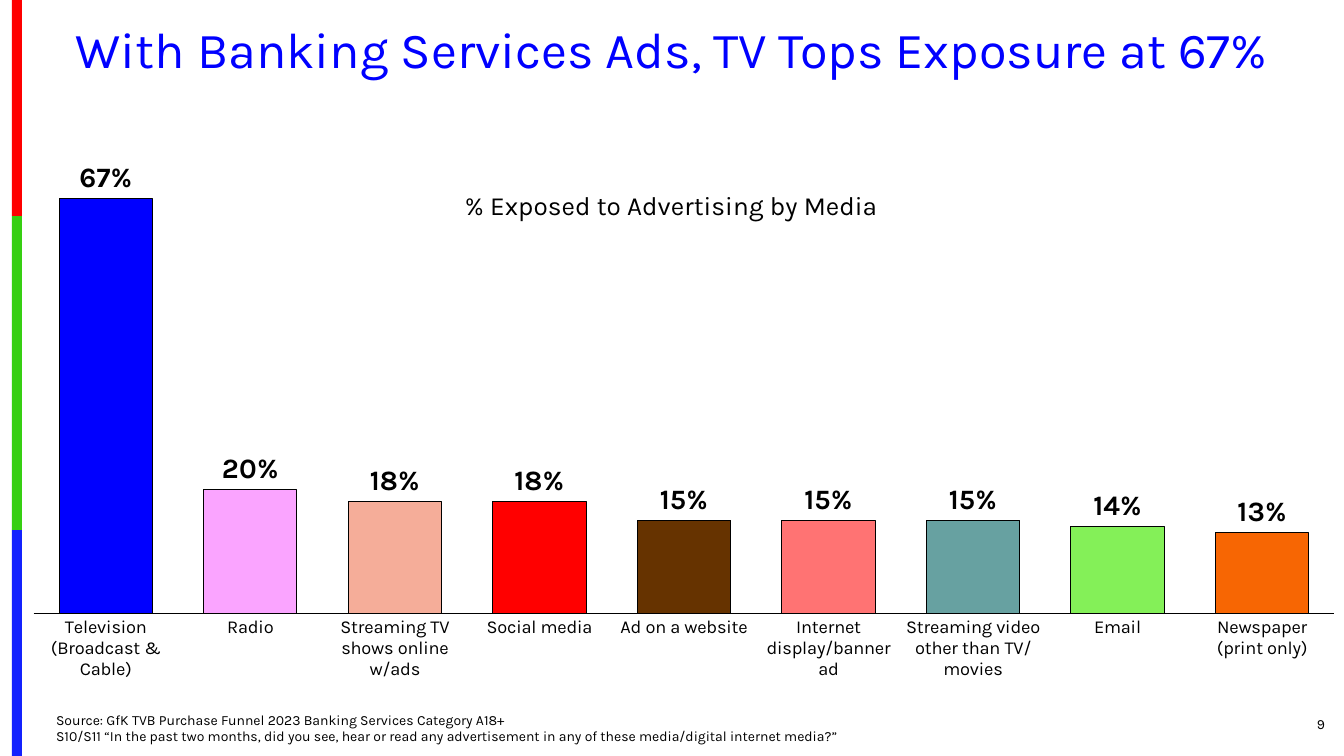
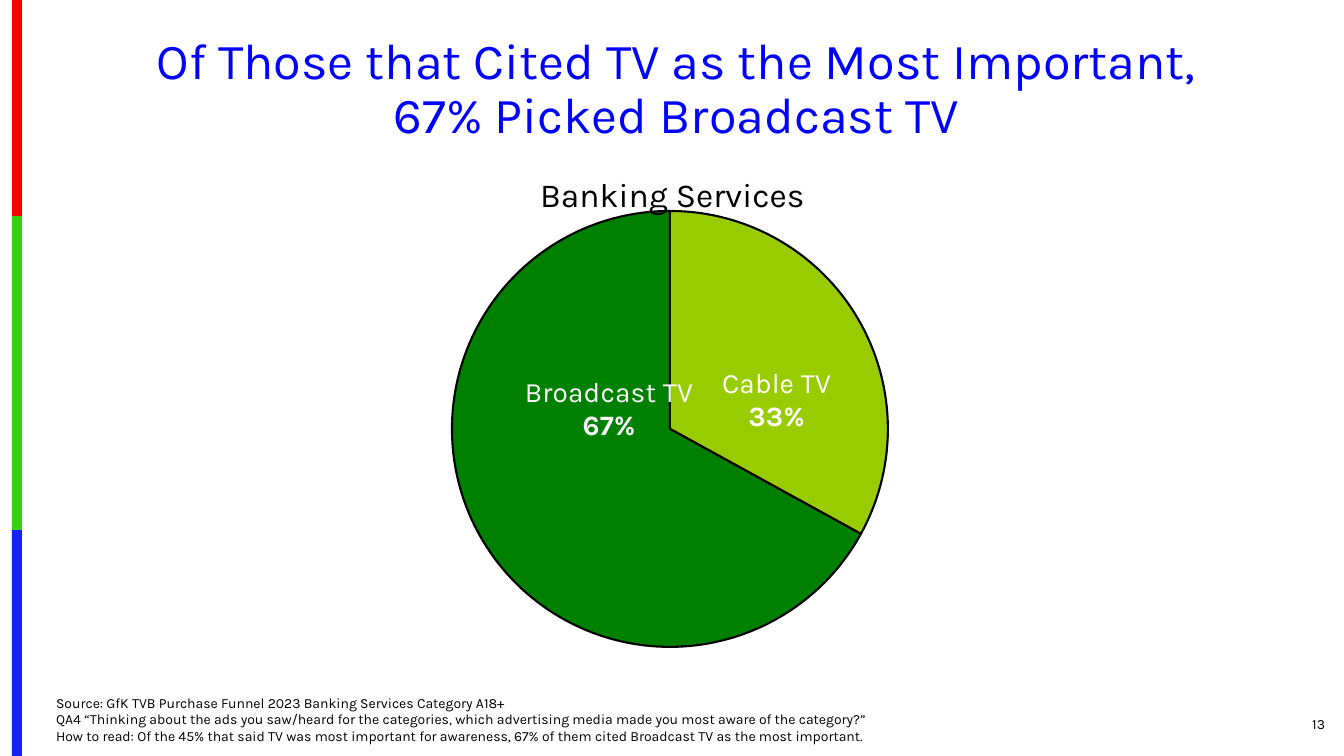
from dataclasses import dataclass

from lxml import etree
from pptx import Presentation
from pptx.chart.data import CategoryChartData
from pptx.dml.color import RGBColor
from pptx.enum.chart import XL_CHART_TYPE, XL_LABEL_POSITION, XL_TICK_MARK
from pptx.enum.shapes import MSO_SHAPE
from pptx.enum.text import MSO_ANCHOR, MSO_AUTO_SIZE, PP_ALIGN
from pptx.oxml.ns import qn
from pptx.util import Pt

COLUMNS, PIE = XL_CHART_TYPE.COLUMN_CLUSTERED, XL_CHART_TYPE.PIE
ABOVE_BAR, MID_SLICE = XL_LABEL_POSITION.OUTSIDE_END, XL_LABEL_POSITION.CENTER
NO_TICKS = XL_TICK_MARK.NONE
RECTANGLE = MSO_SHAPE.RECTANGLE
TOP, MIDDLE = MSO_ANCHOR.TOP, MSO_ANCHOR.MIDDLE
LEFT, CENTER, RIGHT = PP_ALIGN.LEFT, PP_ALIGN.CENTER, PP_ALIGN.RIGHT
FIXED_SIZE = MSO_AUTO_SIZE.NONE

PX = 12192000 / 1344
SLIDE_SIZE = (1344, 756)


@dataclass(frozen=True)
class Theme:
    face: str = "Karla"
    heading: str = "0000FF"
    ink: str = "000000"
    paper: str = "FFFFFF"
    title_size: int = 36
    label_size: int = 20
    axis_size: int = 13
    note_size: int = 10
    bar_outline: float = 0.75
    slice_outline: float = 1.5


THEME = Theme()

BAND_LEFT, BAND_WIDTH = 12, 10
BANDS = [("FE0000", 216), ("36CF12", 314), ("1322FE", 226)]
NUMBER_BOX = (1226, 704, 109, 40)
SOURCE = "Source: GfK TVB Purchase Funnel 2023 Banking Services Category A18+"

EXPOSURE = {
    "title": ["With Banking Services Ads, TV Tops Exposure at 67%"],
    "title_box": (46, 19, 1252, 66),
    "number": "9",
    "notes": [
        SOURCE,
        "S10/S11 “In the past two months, did you see, hear or read any "
        "advertisement in any of these media/digital internet media?”",
    ],
    "notes_box": (46, 706, 1072, 44),
    "kind": COLUMNS,
    "chart_box": (33, 102, 1302, 578),
    "plot_box": (33, 118, 1302, 497),
    "heading": "% Exposed to Advertising by Media",
    "heading_size": 18.7,
    "heading_at": (460, 184),
    "outline": THEME.bar_outline,
    "points": [
        ("Television (Broadcast & Cable)", 0.67, "0000FF"),
        ("Radio", 0.20, "FAA4FF"),
        ("Streaming TV shows online w/ads", 0.18, "F5AD99"),
        ("Social media", 0.18, "FF0000"),
        ("Ad on a website", 0.15, "663300"),
        ("Internet display/banner ad", 0.15, "FF7373"),
        ("Streaming video other than TV/movies", 0.15, "67A1A1"),
        ("Email", 0.14, "84F058"),
        ("Newspaper\n(print only)", 0.13, "F76603"),
    ],
}

TV_SPLIT = {
    "title": ["Of Those that Cited TV as the Most Important,",
              "67% Picked Broadcast TV"],
    "title_box": (34, 30, 1285, 120),
    "number": "13",
    "notes": [
        SOURCE,
        "QA4 “Thinking about the ads you saw/heard for the categories, which "
        "advertising media made you most aware of the category?”",
        "How to read: Of the 45% that said TV was most important for "
        "awareness, 67% of them cited Broadcast TV as the most important.",
    ],
    "notes_box": (46, 689, 953, 62),
    "kind": PIE,
    "chart_box": (40, 151, 1272, 516),
    "plot_box": (452, 211, 436, 436),
    "heading": "Banking Services",
    "heading_size": 24,
    "heading_at": (534, 167),
    "outline": THEME.slice_outline,
    "points": [("Cable TV", 0.33, "99CC00"), ("Broadcast TV", 0.67, "008000")],
    "label_shifts": [(13, 27), (33, -75)],
}


def emu(lengths):
    return [round(length * PX) for length in lengths]


def style(font, size, color=THEME.ink, bold=False):
    font.name = THEME.face
    font.size = Pt(size)
    font.bold = bold
    font.color.rgb = RGBColor.from_string(color)


def add_run(paragraph, words, size, color=THEME.ink, bold=False):
    run = paragraph.add_run()
    run.text = words
    style(run.font, size, color, bold)


def place(part, box, anchor):
    part.left, part.top, part.width, part.height = emu(box)
    frame = part.text_frame
    frame.word_wrap = True
    frame.auto_size = FIXED_SIZE
    frame.vertical_anchor = anchor
    return frame


def add_bands(slide, master):
    top = 0
    for color, height in BANDS:
        band = slide.shapes.add_shape(
            RECTANGLE, *emu((BAND_LEFT, top, BAND_WIDTH, height)))
        band.shadow.inherit = False
        band.fill.solid()
        band.fill.fore_color.rgb = RGBColor.from_string(color)
        band.line.fill.background()
        master.shapes.element.insert(2, band.element)
        top += height


def add_title(slide, content):
    frame = place(slide.shapes.title, content["title_box"], MIDDLE)
    paragraph = frame.paragraphs[0]
    paragraph.alignment = CENTER
    paragraph.line_spacing = 0.9
    for index, line in enumerate(content["title"]):
        if index:
            paragraph.add_line_break()
        add_run(paragraph, line, THEME.title_size, THEME.heading)


def add_notes(slide, content):
    frame = place(slide.placeholders[1], content["notes_box"], TOP)
    for index, line in enumerate(content["notes"]):
        paragraph = frame.add_paragraph() if index else frame.paragraphs[0]
        properties = paragraph._p.get_or_add_pPr()
        properties.set("marL", "0")
        properties.set("indent", "0")
        etree.SubElement(properties, qn("a:buNone"))
        paragraph.alignment = LEFT
        paragraph.space_before = Pt(0)
        add_run(paragraph, line, THEME.note_size)


def add_number(slide, content):
    number = slide.shapes.add_textbox(*emu(NUMBER_BOX))
    paragraph = place(number, NUMBER_BOX, MIDDLE).paragraphs[0]
    paragraph.alignment = RIGHT
    add_run(paragraph, content["number"], THEME.note_size)


def set_layout(parent, index, modes, fractions):
    for old in parent.findall(qn("c:layout")):
        parent.remove(old)
    layout = etree.Element(qn("c:layout"))
    manual = etree.SubElement(layout, qn("c:manualLayout"))
    for key, setting in modes + list(zip("xywh", fractions)):
        etree.SubElement(manual, qn("c:" + key)).set("val", str(setting))
    parent.insert(index, layout)


def chart_fractions(content, lengths, from_corner=True):
    left, top, width, height = content["chart_box"]
    origin = (left, top, 0, 0) if from_corner else (0, 0)
    return [(length - start) / whole for length, start, whole
            in zip(lengths, origin, (width, height) * 2)]


def outline(part, width):
    part.format.line.color.rgb = RGBColor.from_string(THEME.ink)
    part.format.line.width = Pt(width)


def format_labels(labels, color, bold):
    labels.show_value = True
    labels.number_format = "0%"
    labels.number_format_is_linked = False
    style(labels.font, THEME.label_size, color, bold)


def format_columns(chart, series):
    plot = chart.plots[0]
    plot.gap_width, plot.overlap = 55, -30
    media = chart.category_axis
    media.major_tick_mark = NO_TICKS
    media.has_major_gridlines = False
    style(media.tick_labels.font, THEME.axis_size)
    outline(media, THEME.bar_outline)
    share = chart.value_axis
    share.minimum_scale, share.maximum_scale = 0, 0.8
    share.has_major_gridlines = False
    share.visible = False
    format_labels(series.data_labels, THEME.ink, True)
    series.data_labels.position = ABOVE_BAR


def label_slices(chart, series, content):
    format_labels(series.data_labels, THEME.paper, False)
    series.data_labels.show_category_name = True
    series.data_labels.show_percentage = False
    for index, (name, share, _) in enumerate(content["points"]):
        label = series.points[index].data_label
        frame = label.text_frame
        add_run(frame.paragraphs[0], name, THEME.label_size, THEME.paper)
        add_run(frame.add_paragraph(), f"{share:.0%}", THEME.label_size,
                THEME.paper, True)
        label.position = MID_SLICE
    labels = chart.element.xpath(".//c:dLbl")
    for label, shift in zip(labels, content["label_shifts"]):
        set_layout(label, 1, [], chart_fractions(content, shift, False))
        for flag in label.findall(qn("c:showCatName")):
            flag.set("val", "1")
    for leader in chart.element.xpath(".//c:showLeaderLines"):
        leader.set("val", "0")


def add_media_chart(slide, content):
    names, shares, colors = zip(*content["points"])
    table = CategoryChartData(number_format="0%")
    table.categories = names
    table.add_series("Series 1", shares)
    chart = slide.shapes.add_chart(
        content["kind"], *emu(content["chart_box"]), table).chart
    style(chart.font, THEME.note_size)
    chart.has_legend = False
    chart.has_title = True
    heading = chart.chart_title.text_frame.paragraphs[0]
    add_run(heading, content["heading"], content["heading_size"])
    edges = [("xMode", "edge"), ("yMode", "edge")]
    set_layout(chart.element.xpath(".//c:chart/c:title")[0], 1, edges,
               chart_fractions(content, content["heading_at"]))
    set_layout(chart.element.xpath(".//c:plotArea")[0], 0,
               [("layoutTarget", "inner")] + edges,
               chart_fractions(content, content["plot_box"]))
    chart.plots[0].vary_by_categories = content["kind"] == PIE
    series = chart.plots[0].series[0]
    outline(series, content["outline"])
    for index, color in enumerate(colors):
        point = series.points[index]
        point.format.fill.solid()
        point.format.fill.fore_color.rgb = RGBColor.from_string(color)
        outline(point, content["outline"])
    if content["kind"] == PIE:
        label_slices(chart, series, content)
    else:
        format_columns(chart, series)


def main():
    prs = Presentation()
    prs.slide_width, prs.slide_height = emu(SLIDE_SIZE)
    for index, content in enumerate([EXPOSURE, TV_SPLIT]):
        slide = prs.slides.add_slide(prs.slide_layouts[1])
        if index == 0:
            add_bands(slide, prs.slide_master)
        add_title(slide, content)
        add_media_chart(slide, content)
        add_notes(slide, content)
        add_number(slide, content)
    prs.save("out.pptx")


if __name__ == "__main__":
    main()
